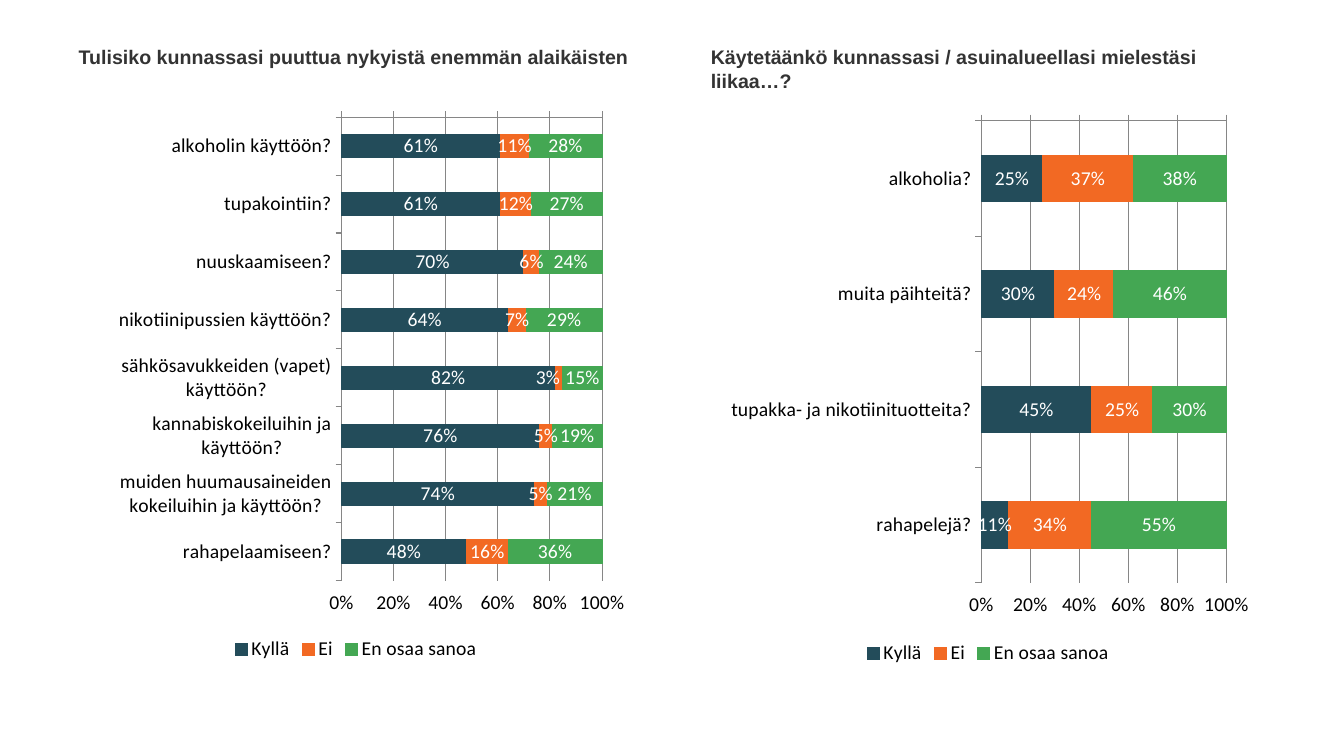
from pptx import Presentation
from pptx.chart.data import CategoryChartData
from pptx.dml.color import RGBColor
from pptx.enum.chart import (XL_CHART_TYPE, XL_LABEL_POSITION, XL_LEGEND_POSITION,
                             XL_TICK_LABEL_POSITION, XL_TICK_MARK)
from pptx.enum.text import MSO_AUTO_SIZE
from pptx.oxml import parse_xml
from pptx.oxml.ns import nsdecls, qn
from pptx.util import Inches, Pt

COLORS = {"heading": "333333", "text": "000000", "label": "FFFFFF", "grid": "868686",
          "Kyllä": "234C5A", "Ei": "F26923", "En osaa sanoa": "44A753"}
ANSWERS = ["Kyllä", "Ei", "En osaa sanoa"]
NARROW_SHARE = 0.05
NARROW_SHIFT = -0.02

# Each question with its percentages in the order of ANSWERS
INTERVENTION = {
    "alkoholin käyttöön?": (61, 11, 28),
    "tupakointiin?": (61, 12, 27),
    "nuuskaamiseen?": (70, 6, 24),
    "nikotiinipussien käyttöön?": (64, 7, 29),
    "sähkösavukkeiden (vapet) käyttöön?": (82, 3, 15),
    "kannabiskokeiluihin ja käyttöön?": (76, 5, 19),
    "muiden huumausaineiden kokeiluihin ja käyttöön?": (74, 5, 21),
    "rahapelaamiseen?": (48, 16, 36),
}
EXCESS_USE = {
    "alkoholia?": (25, 37, 38),
    "muita päihteitä?": (30, 24, 46),
    "tupakka- ja nikotiinituotteita?": (45, 25, 30),
    "rahapelejä?": (11, 34, 55),
}


def color(name):
    return RGBColor.from_string(COLORS[name])


def format_font(font, name="Calibri", size=14, fill="text", bold=False):
    font.name = name
    font.size = Pt(size)
    font.bold = bold
    font.color.rgb = color(fill)


def add_text(paragraph, text, **style):
    span = paragraph.add_run()
    span.text = text
    format_font(span.font, **style)


def manual_layout(content):
    return parse_xml(f'<c:layout {nsdecls("c")}><c:manualLayout>{content}'
                     '</c:manualLayout></c:layout>')


class SurveySlide:
    heading_style = {"name": "Arial", "fill": "heading", "bold": True}

    def __init__(self, deck):
        self.page = deck.slides.add_slide(deck.slide_layouts[6])

    def heading(self, text, left, top, width, height):
        box = self.page.shapes.add_textbox(*map(Inches, (left, top, width, height)))
        frame = box.text_frame
        frame.word_wrap = True
        frame.auto_size = MSO_AUTO_SIZE.SHAPE_TO_FIT_TEXT
        frame.margin_left = frame.margin_right = frame.margin_top = frame.margin_bottom = 0
        add_text(frame.paragraphs[0], text, **self.heading_style)

    def stacked_bars(self, questions, left, top, width, height, plot_area):
        data = CategoryChartData(number_format="0%")
        data.categories = list(questions)
        for answer, shares in zip(ANSWERS, zip(*questions.values())):
            data.add_series(answer, [share / 100 for share in shares])
        chart = self.page.shapes.add_chart(
            XL_CHART_TYPE.BAR_STACKED, *map(Inches, (left, top, width, height)), data).chart
        chart.has_title = False
        format_font(chart.font)
        chart.has_legend = True
        chart.legend.position = XL_LEGEND_POSITION.BOTTOM
        chart.legend.include_in_layout = False

        # Bars
        plot = chart.plots[0]
        plot.gap_width = 150
        plot.overlap = 100
        plot.vary_by_categories = False
        for series in plot.series:
            series.format.fill.solid()
            series.format.fill.fore_color.rgb = color(series.name)
            series.format.line.color.rgb = color(series.name)
            series.format.line.width = Pt(0.75)
            self.bar_labels(series)

        self.axes(chart)
        self.place_plot(chart, plot_area)

    def bar_labels(self, series):
        labels = series.data_labels
        labels.show_value = True
        labels.number_format = "0%"
        labels.number_format_is_linked = False
        labels.position = XL_LABEL_POSITION.CENTER
        format_font(labels.font, fill="label")

        # Labels of very narrow segments move left, clear of the next label
        for index, share in enumerate(series.values):
            if share < NARROW_SHARE:
                label = series.points[index].data_label
                format_font(label.font, fill="label")
                label.position = XL_LABEL_POSITION.CENTER
                element = series.data_labels._element.find(qn("c:dLbl"))
                element.insert(1, manual_layout(f'<c:x val="{NARROW_SHIFT}"/><c:y val="0"/>'))

    def axes(self, chart):
        questions, shares = chart.category_axis, chart.value_axis
        questions.reverse_order = True
        questions.tick_label_position = XL_TICK_LABEL_POSITION.LOW
        shares.tick_label_position = XL_TICK_LABEL_POSITION.HIGH
        shares.minimum_scale, shares.maximum_scale, shares.major_unit = 0, 1, 0.2
        shares.tick_labels.number_format = "0%"
        shares.tick_labels.number_format_is_linked = False
        shares.has_major_gridlines = True
        for axis in (questions, shares):
            axis.major_tick_mark = XL_TICK_MARK.OUTSIDE
            format_font(axis.tick_labels.font)
        for line in (questions.format.line, shares.format.line,
                     shares.major_gridlines.format.line):
            line.color.rgb = color("grid")
            line.width = Pt(0.75)

    def place_plot(self, chart, plot_area):
        # Inner plot area as fractions of the chart
        element = chart.plots[0]._element.getparent()
        layout = element.find(qn("c:layout"))
        if layout is not None:
            element.remove(layout)
        sizes = "".join(f'<c:{tag} val="{value}"/>' for tag, value in zip("xywh", plot_area))
        element.insert(0, manual_layout(
            '<c:layoutTarget val="inner"/><c:xMode val="edge"/><c:yMode val="edge"/>' + sizes))


def main():
    deck = Presentation()
    deck.slide_width, deck.slide_height = Inches(13.33), Inches(7.5)
    slide = SurveySlide(deck)

    # Left half: should the municipality intervene more
    slide.heading("Tulisiko kunnassasi puuttua nykyistä enemmän alaikäisten",
                  0.78, 0.45, 6.03, 0.24)
    slide.stacked_bars(INTERVENTION, 0.78, 1.04, 5.5, 5.56, (0.474, 0.022, 0.47, 0.827))

    # Right half: is there too much use
    slide.heading("Käytetäänkö kunnassasi / asuinalueellasi mielestäsi liikaa…?",
                  7.05, 0.45, 5.5, 0.47)
    slide.stacked_bars(EXCESS_USE, 7.05, 1.04, 5.5, 5.6, (0.488, 0.028, 0.442, 0.819))

    deck.save("out.pptx")


if __name__ == "__main__":
    main()
